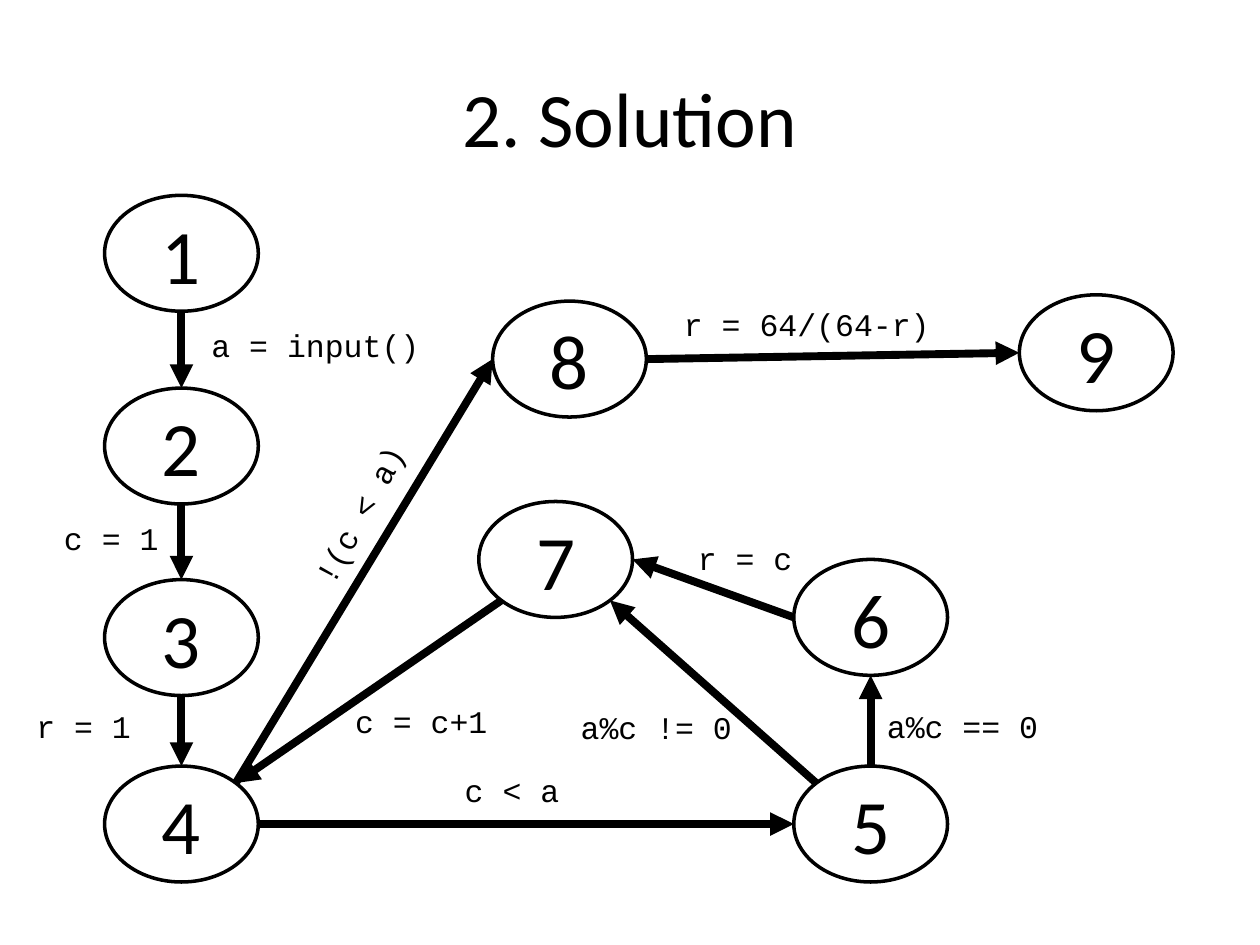
import math
import pptx
import pptx.dml.color
import pptx.enum.shapes
import pptx.enum.text
import pptx.oxml.xmlchemy
import pptx.util
from lxml import etree
from pptx.oxml.ns import qn

BLACK = pptx.dml.color.RGBColor(0, 0, 0)
WIDE, HIGH = pptx.util.Inches(10), pptx.util.Inches(7.5)
MID = pptx.enum.text.PP_ALIGN.CENTER
LEFT = pptx.enum.text.PP_ALIGN.LEFT

# Text formats
BIG = {"name": "Calibri", "size": pptx.util.Pt(44)}
CODE = {"name": "Courier New", "size": pptx.util.Pt(18)}

# All lengths are percent of the slide's width and height
NODE_W, NODE_H = 12.2, 12.27
LABEL_H = 5.33

# Node: centre
NODES = {
    "1": (14.4, 26.8), "2": (14.4, 47.2), "3": (14.4, 67.47),
    "4": (14.4, 87.2), "5": (69.1, 87.2), "6": (69.1, 65.33),
    "7": (44.1, 59.2), "8": (45.2, 38), "9": (87, 37.33),
}

# Edge: start node, angle on its rim, end node, angle on its rim
EDGES = [
    ("1", 90, "2", 270), ("2", 90, "3", 270), ("3", 90, "4", 270),
    ("4", 0, "5", 180), ("4", 315, "8", 180), ("5", 270, "6", 90),
    ("5", 225, "7", 45), ("6", 180, "7", 0), ("7", 135, "4", 315),
    ("8", 0, "9", 180),
]

# Label: text, left, top, width, turn
LABELS = [
    ("a = input()", 15.8, 33.87, 23.3, 0),
    ("c = 1", 4.1, 54.27, 10.3, 0),
    ("r = 1", 1.9, 74.13, 23.3, 0),
    ("c < a", 35.9, 80.93, 10, 0),
    ("a%c == 0", 69.4, 74.13, 19.5, 0),
    ("!(c < a)", 21.4, 51.6, 14.3, 298.8),
    ("a%c != 0", 45.1, 74.27, 15.1, 0),
    ("r = c", 54.4, 56.4, 10, 0),
    ("r = 64/(64-r)", 53.3, 31.6, 27.7, 0),
    ("c = c+1", 27.2, 73.6, 13.6, 0),
]


def place(*nums):
    """Turn percent pairs of across and down into slide lengths."""
    return [round(num * (HIGH if i % 2 else WIDE) / 100)
            for i, num in enumerate(nums)]


def write(shape, text, form, align, anchor):
    frame = shape.text_frame
    frame.word_wrap = True
    frame.vertical_anchor = anchor
    para = frame.paragraphs[0]
    para.alignment = align
    run = para.add_run()
    run.text = text
    for key, val in form.items():
        setattr(run.font, key, val)
    run.font.color.rgb = BLACK


def add_text(slide, text, box, form, align, anchor, turn=0):
    shape = slide.shapes.add_textbox(*place(*box))
    shape.rotation = turn
    write(shape, text, form, align, anchor)


def add_node(slide, name):
    x, y = NODES[name]
    box = place(x - NODE_W / 2, y - NODE_H / 2, NODE_W, NODE_H)
    shape = slide.shapes.add_shape(
        pptx.enum.shapes.MSO_SHAPE.OVAL, *box)
    shape.shadow.inherit = False
    shape.fill.background()
    shape.line.color.rgb = BLACK
    shape.line.width = pptx.util.Pt(2)
    write(shape, name, BIG, MID, pptx.enum.text.MSO_ANCHOR.MIDDLE)


def rim(name, angle):
    """Point on a node's outline, clockwise from its right side."""
    x, y = NODES[name]
    turn = math.radians(angle)
    return (x + NODE_W / 2 * math.cos(turn),
            y + NODE_H / 2 * math.sin(turn))


def add_edge(slide, start, leave, end, reach):
    edge = slide.shapes.add_connector(
        pptx.enum.shapes.MSO_CONNECTOR.STRAIGHT,
        *place(*rim(start, leave), *rim(end, reach)))
    edge.line.color.rgb = BLACK
    edge.line.width = pptx.util.Pt(4.5)
    # Arrowhead at the end, and no shadow
    props = edge._element.spPr
    etree.SubElement(props.find(qn("a:ln")), qn("a:tailEnd"),
                     type="triangle")
    etree.SubElement(props, qn("a:effectLst"))


def main():
    deck = pptx.Presentation()
    deck.slide_width, deck.slide_height = WIDE, HIGH
    slide = deck.slides.add_slide(deck.slide_layouts[6])

    # Title
    add_text(slide, "2. Solution", (5, 4, 90, 16.67), BIG, MID,
             pptx.enum.text.MSO_ANCHOR.MIDDLE)

    # Flow graph
    for name in NODES:
        add_node(slide, name)
    for edge in EDGES:
        add_edge(slide, *edge)

    # Edge labels
    for text, x, y, width, turn in LABELS:
        add_text(slide, text, (x, y, width, LABEL_H), CODE, LEFT,
                 pptx.enum.text.MSO_ANCHOR.TOP, turn)

    deck.save("out.pptx")


if __name__ == "__main__":
    main()
